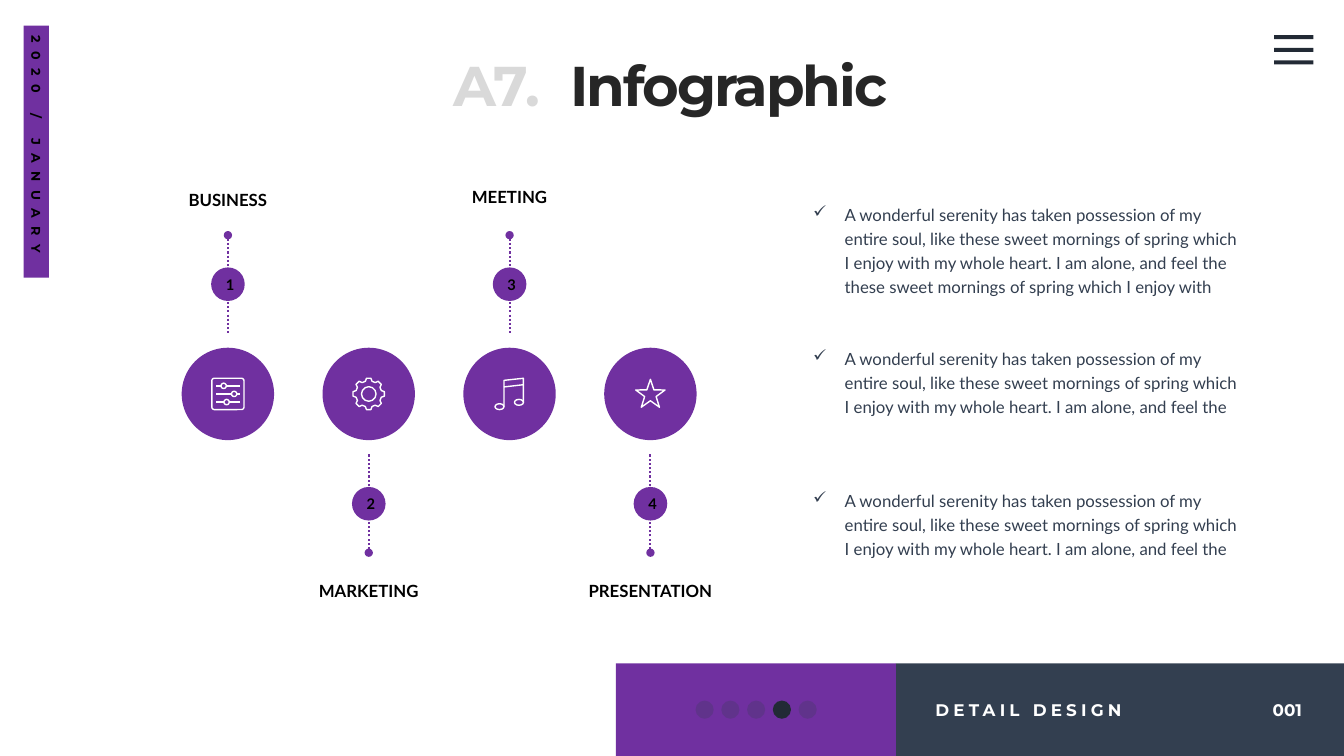
from dataclasses import dataclass
from math import cos, radians, sin

from lxml import etree
from pptx import Presentation
from pptx.dml.color import RGBColor
from pptx.enum.dml import MSO_LINE
from pptx.enum.shapes import MSO_CONNECTOR, MSO_SHAPE
from pptx.enum.text import MSO_ANCHOR, MSO_AUTO_SIZE, PP_ALIGN
from pptx.oxml.ns import qn
from pptx.util import Pt

RECT, ROUND, OVAL = MSO_SHAPE.RECTANGLE, MSO_SHAPE.ROUNDED_RECTANGLE, MSO_SHAPE.OVAL
LEFT, CENTER = PP_ALIGN.LEFT, PP_ALIGN.CENTER
TOP, MIDDLE = MSO_ANCHOR.TOP, MSO_ANCHOR.MIDDLE
STRAIGHT, DOTS = MSO_CONNECTOR.STRAIGHT, MSO_LINE.ROUND_DOT


@dataclass(frozen=True)
class Theme:
    accent: str = "7030A0"
    slate: str = "333F50"
    dark: str = "222A35"
    ink: str = "262626"
    pale: str = "D9D9D9"
    black: str = "000000"
    white: str = "FFFFFF"
    body: str = "Lato"
    head: str = "Montserrat"
    title: float = 40
    text: float = 12
    badge: float = 10.5
    tab: float = 9


T = Theme()
SERENE = ("A wonderful serenity has taken possession of my entire soul, like these "
          "sweet mornings of spring which I enjoy with my whole heart. "
          "I am alone, and feel the")


def rgb(color):
    return RGBColor.from_string(color)


def box(x, y, w, h):
    return Pt(x), Pt(y), Pt(w), Pt(h)


def write(shape, words, size, color, font=T.body, bold=True, track=0,
          align=LEFT, anchor=TOP, wrap=False):
    frame = shape.text_frame
    frame.text = words
    frame.word_wrap = wrap
    frame.auto_size = MSO_AUTO_SIZE.NONE
    frame.vertical_anchor = anchor
    para = frame.paragraphs[0]
    para.alignment = align
    run = para.runs[0]
    run.font.size, run.font.name, run.font.bold = Pt(size), font, bold
    run.font.color.rgb = rgb(color)
    if track:
        run._r.get_or_add_rPr().set("spc", str(int(track * 100)))
    return para


def label(slide, area, *args, **style):
    return write(slide.shapes.add_textbox(*box(*area)), *args, **style)


def block(slide, kind, area, color):
    shape = slide.shapes.add_shape(kind, *box(*area))
    shape.shadow.inherit = False
    shape.fill.solid()
    shape.fill.fore_color.rgb = rgb(color)
    shape.line.fill.background()
    return shape


def outline(shape):
    shape.shadow.inherit = False
    shape.fill.background()
    shape.line.color.rgb = rgb(T.white)
    shape.line.width = Pt(1)


def ring(slide, cx, cy, rx, ry, kind=OVAL):
    shape = slide.shapes.add_shape(kind, *box(cx - rx, cy - ry, 2 * rx, 2 * ry))
    outline(shape)
    return shape


def trace(slide, cx, cy, strokes, close=False):
    paths = [[(Pt(cx + x), Pt(cy + y)) for x, y in stroke] for stroke in strokes]
    pen = slide.shapes.build_freeform(*paths[0][0])
    for i, path in enumerate(paths):
        if i:
            pen.move_to(*path[0])
        pen.add_line_segments(path[1:], close=close)
    outline(pen.convert_to_shape())


def polar(radius, angle):
    return radius * sin(radians(angle)), -radius * cos(radians(angle))


# Icons, each drawn around its centre
def sliders(slide, cx, cy):
    ring(slide, cx, cy, 11.5, 11.2, ROUND).adjustments[0] = 0.08
    knobs = [(-3, -5.8), (4.5, 0), (-0.9, 5.8)]
    rails = []
    for x, y in knobs:
        ring(slide, cx + x, cy + y, 1.9, 1.9)
        rails += [[(-8.3, y), (x - 1.9, y)], [(x + 1.9, y), (8.5, y)]]
    trace(slide, cx, cy, rails)


def gear(slide, cx, cy):
    tooth = [(9.3, -15), (11.3, -8), (11.3, 8), (9.3, 15)]
    rim = [polar(r, 45 * i + a) for i in range(8) for r, a in tooth]
    trace(slide, cx, cy, [rim], close=True)
    ring(slide, cx, cy, 5.2, 5.2)


def music(slide, cx, cy):
    trace(slide, cx, cy, [[(-4, 9), (-4, -9.7), (9.9, -11.2), (9.9, 6)],
                          [(-4, -5), (9.9, -6.6)]])
    ring(slide, cx - 7.2, cy + 9.1, 3.2, 2.1)
    ring(slide, cx + 6.7, cy + 6, 3.2, 2.1)


def star(slide, cx, cy):
    tips = [polar(4.3 if i % 2 else 11, 36 * i) for i in range(10)]
    trace(slide, cx, cy + 0.6, [tips], close=True)


def stalk(slide, x, far, near):
    line = slide.shapes.add_connector(STRAIGHT, Pt(x), Pt(far), Pt(x), Pt(near))
    line.line.color.rgb = rgb(T.accent)
    line.line.width = Pt(1.5)
    line.line.dash_style = DOTS
    etree.SubElement(line.line._get_or_add_ln(), qn("a:headEnd"), type="oval")
    etree.SubElement(line._element.spPr, qn("a:effectLst"))


def steps(slide, left, mid, pitch):
    # Side is -1 above the row and 1 below it; gap runs from row to label
    items = [("BUSINESS", sliders, -1, 139), ("MARKETING", gear, 1, 140.3),
             ("MEETING", music, -1, 141.2), ("PRESENTATION", star, 1, 140.3)]
    for i, (name, icon, side, gap) in enumerate(items):
        x = left + i * pitch
        label(slide, (x - 87.5, mid + side * gap - 12, 175, 24), name, T.text,
              T.black, align=CENTER, anchor=MIDDLE, wrap=True)
        block(slide, OVAL, (x - 33, mid - 33, 66, 66), T.accent)
        icon(slide, x, mid)
        stalk(slide, x, mid + side * 113.4, mid + side * 42.6)
        badge = block(slide, OVAL, (x - 12, mid + side * 78.4 - 12, 24, 24), T.accent)
        write(badge, str(i + 1), T.badge, T.black, align=CENTER, anchor=MIDDLE)
        frame = badge.text_frame
        frame.margin_left, frame.margin_right = Pt(3), 0
        frame.margin_top = frame.margin_bottom = 0


def notes(slide, left, top, wide):
    items = [(0, 75.6, SERENE + " these sweet mornings of spring which I enjoy with"),
             (102.9, 58.3, SERENE), (204.5, 58.3, SERENE)]
    for drop, high, words in items:
        para = label(slide, (left, top + drop, wide, high), words, T.text, T.slate,
                     bold=False, wrap=True)
        props = para._p.get_or_add_pPr()
        props.set("marL", str(Pt(22.5)))
        props.set("indent", str(-Pt(22.5)))
        etree.SubElement(props, qn("a:buChar"), char="✓")
        para.line_spacing = 1.2


def footer(slide, left, top, high):
    block(slide, RECT, (left + 200, top, 320, high), T.slate)
    label(slide, (left + 462, top + 22.3, 36, 21.6), "001", T.text, T.white, T.head)
    label(slide, (left + 221, top + 22.3, 152, 21.6), "DETAIL DESIGN", T.text,
          T.white, T.head, track=3)
    block(slide, RECT, (left, top, 200, high), T.accent)
    # Page dots, the fourth one lit
    for i in range(5):
        lit = i == 3
        dot = block(slide, OVAL, (left + 56.8 + 18.4 * i, top + 26.6, 13, 13),
                    T.dark if lit else T.slate)
        if not lit:
            tint = dot._element.spPr.find(qn("a:solidFill"))[0]
            etree.SubElement(tint, qn("a:alpha"), val="25000")


def corners(slide):
    # Date tab
    tab = block(slide, RECT, (-64.1, 99.4, 180, 18), T.accent)
    tab.rotation = 90
    write(tab, "2020 / JANUARY", T.tab, T.black, T.head, track=6)
    # Menu bars
    for i in range(3):
        block(slide, RECT, (910.1, 25.2 + 9 * i, 28.1, 2.9), T.dark)


def heading(slide, left, top, high):
    label(slide, (left, top, 81.4, high), "A7.", T.title, T.pale, T.head, align=CENTER)
    title = slide.shapes.title
    title.left, title.top, title.width, title.height = box(left + 85, top, 243.4, high)
    para = write(title, "Infographic", T.title, T.ink, T.head, track=-1.5, align=CENTER)
    para.line_spacing = 1.0


def main():
    deck = Presentation()
    deck.slide_width, deck.slide_height = Pt(960), Pt(540)
    slide = deck.slides.add_slide(deck.slide_layouts[5])
    steps(slide, 162.8, 281.4, 100.6)
    notes(slide, 573.8, 139.7, 321.8)
    footer(slide, 440, 473.8, 66.2)
    corners(slide)
    heading(slide, 313.9, 32.4, 55.4)
    deck.save("out.pptx")


if __name__ == "__main__":
    main()
